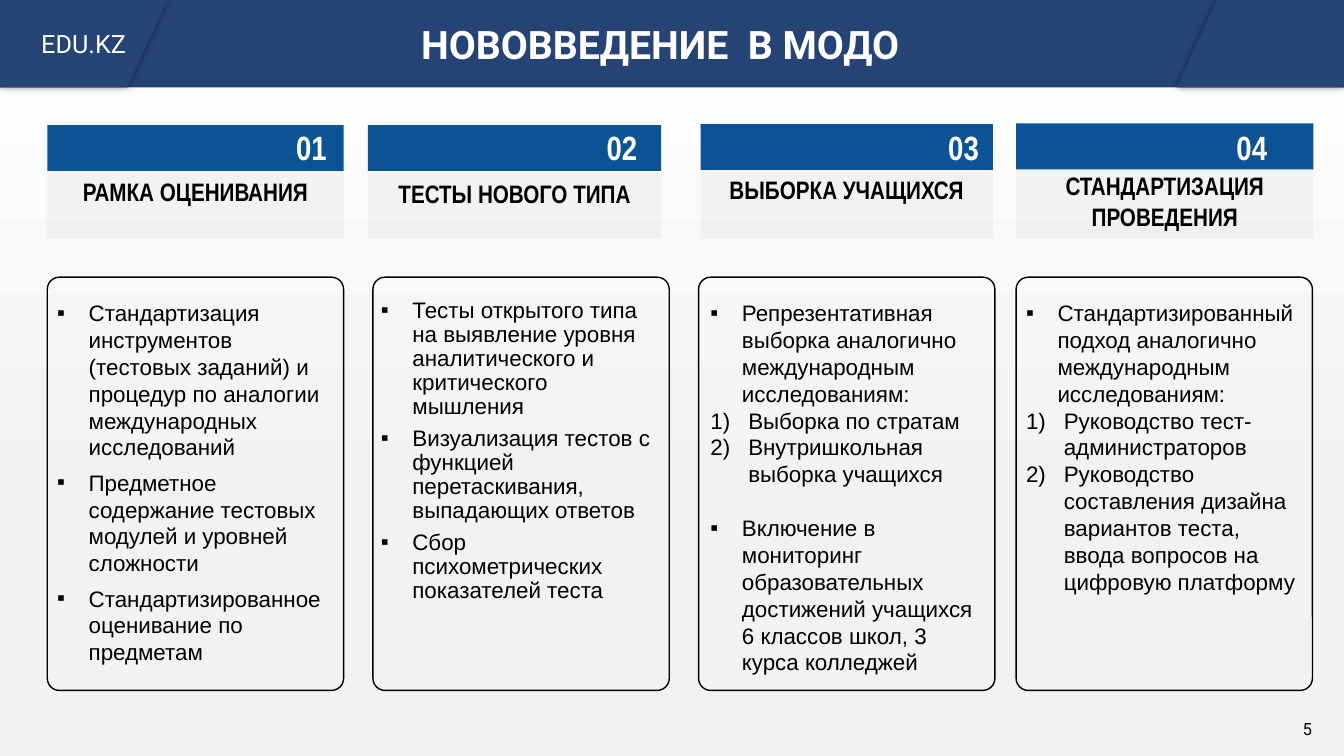
import pptx
import pptx.util
import pptx.dml.color
import pptx.enum.shapes
import pptx.enum.text
import pptx.oxml
import pptx.oxml.ns
from lxml import etree

Pt = pptx.util.Pt
SHAPES = pptx.enum.shapes.MSO_SHAPE
ALIGN = pptx.enum.text.PP_ALIGN
ANCHOR = pptx.enum.text.MSO_ANCHOR
qn = pptx.oxml.ns.qn

WIDTH, HEIGHT = 960, 540
NAVY, BLUE, DARK, BLACK, WHITE = "254375", "0B5394", "191919", "000000", "FFFFFF"
BULLET, NUMBER = "bullet", "number"
INDENTS = {BULLET: 22.5, NUMBER: 27}


def color(hex_string):
    return pptx.dml.color.RGBColor.from_string(hex_string)


def add_marker(paragraph, kind):
    """Give a paragraph a square bullet or a running number."""
    properties = paragraph._p.get_or_add_pPr()
    indent = Pt(INDENTS[kind])
    properties.set("marL", str(indent))
    properties.set("indent", str(-indent))
    etree.SubElement(properties, qn("a:buFont"), typeface="Arial")
    if kind == BULLET:
        etree.SubElement(properties, qn("a:buChar"), char="▪")
    else:
        etree.SubElement(properties, qn("a:buAutoNum"), type="arabicParenR")


def write(shape, text, size=16, font="Arial", ink=BLACK, bold=False, align=ALIGN.LEFT,
          anchor=ANCHOR.TOP, marker=None, spacing=None, before=0, after=0, first=True):
    """Write one paragraph; first=False adds it below the existing ones."""
    frame = shape.text_frame
    frame.word_wrap = True
    frame.vertical_anchor = anchor
    paragraph = frame.paragraphs[0] if first else frame.add_paragraph()
    paragraph.alignment = align
    if spacing:
        paragraph.line_spacing = spacing
    paragraph.space_before, paragraph.space_after = Pt(before), Pt(after)
    if marker:
        add_marker(paragraph, marker)
    run = paragraph.add_run()
    run.text = text
    run.font.name, run.font.size, run.font.bold = font, Pt(size), bold
    run.font.color.rgb = color(ink)


def add_text_box(slide, box):
    return slide.shapes.add_textbox(*map(Pt, box))


def add_box(slide, box, fill=None, line=None, kind=SHAPES.RECTANGLE):
    shape = slide.shapes.add_shape(kind, *map(Pt, box))
    shape.shadow.inherit = False
    if fill:
        shape.fill.solid()
        shape.fill.fore_color.rgb = color(fill)
    else:
        shape.fill.background()
    if line:
        shape.line.color.rgb = color(line)
        shape.line.width = Pt(1)
    else:
        shape.line.fill.background()
    return shape


def add_tab(slide, points):
    """Draw a slanted end of the banner with a soft shadow."""
    (start_x, start_y), *others = [(Pt(x), Pt(y)) for x, y in points]
    builder = slide.shapes.build_freeform(start_x, start_y)
    builder.add_line_segments(others, close=True)
    tab = builder.convert_to_shape()
    tab.fill.solid()
    tab.fill.fore_color.rgb = color(NAVY)
    tab.line.fill.background()
    tab.shadow.inherit = False
    effects = tab._element.spPr.find(qn("a:effectLst"))
    shadow = etree.SubElement(effects, qn("a:outerShdw"), blurRad=str(Pt(5)), dist="0", dir="0")
    shade = etree.SubElement(shadow, qn("a:srgbClr"), val=BLACK)
    etree.SubElement(shade, qn("a:alpha"), val="40000")
    return tab


def add_banner(slide, box):
    left, top, width, height = box
    right, bottom = left + width, top + height
    add_box(slide, box, fill=NAVY)
    site_tab = add_tab(slide, [(left, top), (left, bottom), (left + 91, bottom), (left + 119.5, top)])
    write(site_tab, "EDU.KZ", size=18, font="Roboto", ink=WHITE,
          align=ALIGN.CENTER, anchor=ANCHOR.MIDDLE)
    add_tab(slide, [(right, bottom), (right, top), (right - 91, top), (right - 119.5, bottom)])
    title = add_text_box(slide, (left + 293.8, top + 8.6, 450.7, 44))
    write(title, "НОВОВВЕДЕНИЕ  В МОДО", size=28, font="Roboto", ink=WHITE, bold=True,
          spacing=1.07, after=8)


def add_header(slide, box, number, number_right, heading_top, heading):
    """Blue band with a number, and a pale heading panel below it."""
    left, top, width, height = box
    add_box(slide, (left, top, width, 32.8), fill=BLUE)
    label = add_text_box(slide, (number_right - 62.6, 86.8, 62.6, 36))
    write(label, number, size=24, font="Arial Narrow", ink=WHITE, bold=True, align=ALIGN.RIGHT)
    panel = add_box(slide, (left, heading_top, width, top + height - heading_top), fill=DARK)
    shade = panel._element.spPr.find(qn("a:solidFill")).find(qn("a:srgbClr"))
    etree.SubElement(shade, qn("a:alpha"), val="4000")
    for index, line in enumerate(heading):
        write(panel, line, size=18, font="Arial Narrow", bold=True,
              align=ALIGN.CENTER, first=index == 0)


def add_card(slide, box, list_left, items, spacing=None, after=0):
    """Rounded frame with a list inside."""
    left, top, width, height = box
    points = add_text_box(slide, (list_left, top + 12.2, width, height - 18))
    for index, (marker, text, before) in enumerate(items):
        write(points, text, marker=marker, spacing=spacing, before=before, after=after,
              first=index == 0)
    frame = add_box(slide, box, line=BLACK, kind=SHAPES.ROUNDED_RECTANGLE)
    frame.adjustments[0] = 0.041


# Header: left, top, width, number right edge, heading top, heading lines
HEADERS = [
    (33.8, 89.3, 211.7, 240.5, 122.6, ["РАМКА ОЦЕНИВАНИЯ"]),
    (262.8, 89.3, 209.5, 462.2, 123.8, ["ТЕСТЫ НОВОГО ТИПА"]),
    (500.4, 88.6, 208.8, 706.3, 121, ["ВЫБОРКА УЧАЩИХСЯ"]),
    (725.8, 88.2, 212.4, 912.2, 118.4, ["СТАНДАРТИЗАЦИЯ", "ПРОВЕДЕНИЯ"]),
]

# Card: frame left, list left, list format, items (marker, text, space before)
CARDS = [
    (33.8, 33.8, {"after": 6}, [
        (BULLET, "Стандартизация инструментов (тестовых заданий) и процедур по аналогии "
                 "международных исследований", 0),
        (BULLET, "Предметное содержание тестовых модулей и уровней сложности", 0),
        (BULLET, "Стандартизированное оценивание по предметам", 0)]),
    (266.4, 265, {"after": 6, "spacing": 0.89}, [
        (BULLET, "Тесты открытого типа на выявление уровня аналитического и критического "
                 "мышления", 0),
        (BULLET, "Визуализация тестов с функцией перетаскивания, выпадающих ответов", 0),
        (BULLET, "Сбор психометрических показателей теста", 0)]),
    (499, 500.4, {}, [
        (BULLET, "Репрезентативная выборка аналогично международным исследованиям:", 0),
        (NUMBER, "Выборка по стратам", 0),
        (NUMBER, "Внутришкольная выборка учащихся", 0),
        (BULLET, "Включение в мониторинг образовательных достижений учащихся 6 классов школ, "
                 "3 курса колледжей", 19.2)]),
    (725.8, 725.8, {}, [
        (BULLET, "Стандартизированный подход аналогично международным исследованиям:", 0),
        (NUMBER, "Руководство тест-администраторов", 0),
        (NUMBER, "Руководство составления дизайна вариантов теста, ввода вопросов на "
                 "цифровую платформу", 0)]),
]


def main():
    presentation = pptx.Presentation()
    presentation.slide_width, presentation.slide_height = Pt(WIDTH), Pt(HEIGHT)
    slide = presentation.slides.add_slide(presentation.slide_layouts[6])

    # Background
    background = slide.background.fill
    background.gradient()
    background.gradient_angle = 270
    for stop, (position, shade) in zip(background.gradient_stops, [(0, WHITE), (0.68, "F2F2F2")]):
        stop.position = position
        stop.color.rgb = color(shade)

    # Banner, column headers and cards
    add_banner(slide, (0, 0, WIDTH, 62.4))
    for index, (left, top, width, number_right, heading_top, heading) in enumerate(HEADERS, 1):
        add_header(slide, (left, top, width, 170.4 - top), f"{index:02}", number_right,
                   heading_top, heading)
    for left, list_left, list_format, items in CARDS:
        add_card(slide, (left, 198, 211.7, 295.2), list_left, items, **list_format)

    # Slide number
    page = add_text_box(slide, (901.4, 509.8, 64.8, 21.6))
    write(page, "5", size=12, font="Roboto", align=ALIGN.CENTER)

    presentation.save("out.pptx")


if __name__ == "__main__":
    main()
